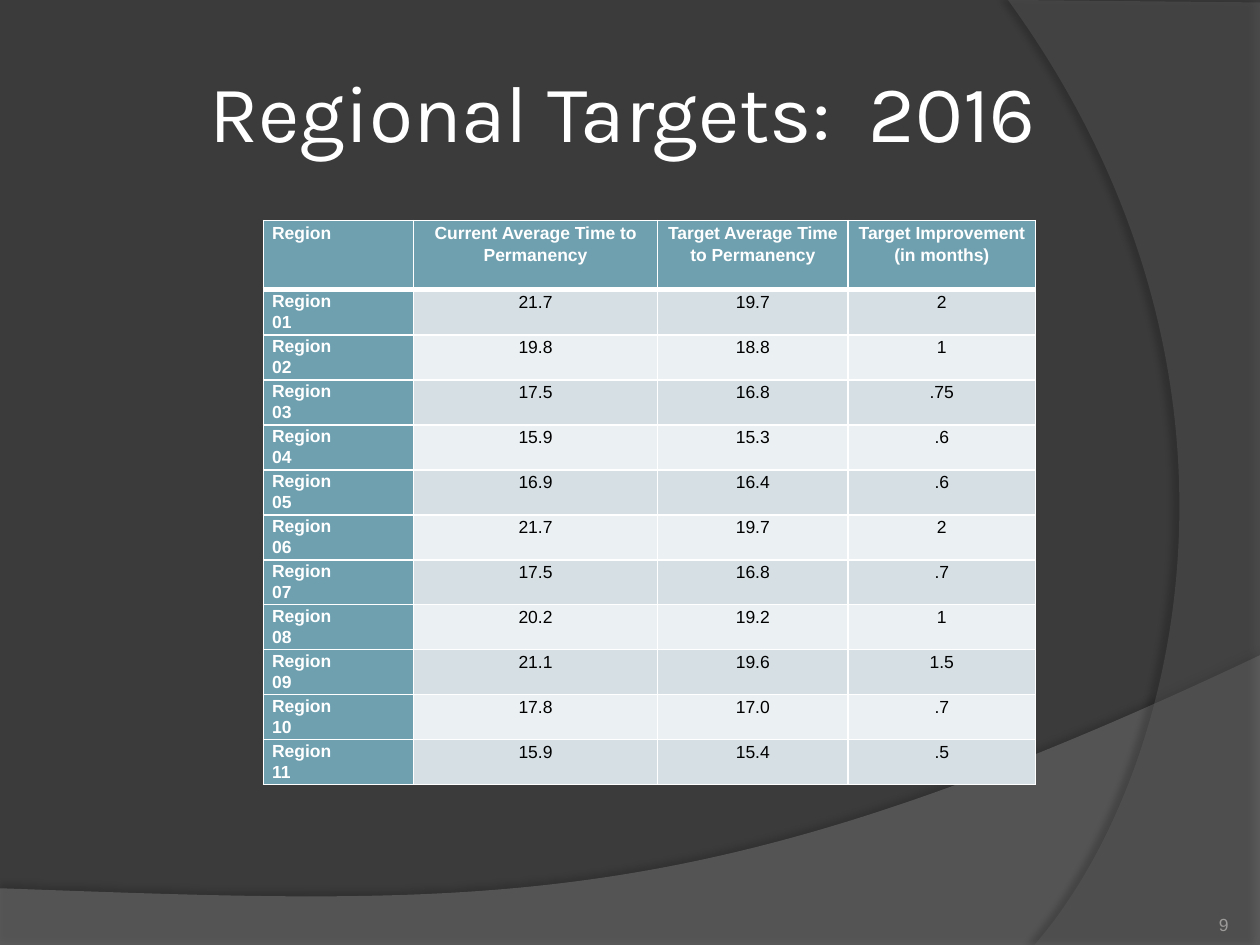
import dataclasses
import typing

import lxml.etree
import pptx
import pptx.dml.color
import pptx.enum.text
import pptx.oxml.ns
import pptx.util

Inches = pptx.util.Inches
Pt = pptx.util.Pt
qn = pptx.oxml.ns.qn
Align = pptx.enum.text.PP_ALIGN
Anchor = pptx.enum.text.MSO_ANCHOR
Point = tuple[float, float]


@dataclasses.dataclass(frozen=True)
class Theme:
    background: str = "3B3B3B"
    white: str = "FFFFFF"
    black: str = "000000"
    muted: str = "9D9B9A"
    accent: str = "6EA0B0"
    bands: tuple[str, str] = ("D5DFE4", "EBF0F2")
    title_font: str = "Karla"
    body_font: str = "Arial"
    title_size: int = 46
    body_size: int = 10


@dataclasses.dataclass(frozen=True)
class Wave:
    """Straight corners, then one Bezier curve starting at the last corner."""
    corners: tuple[Point, ...]
    curve: tuple[Point, Point, Point]
    color: str
    opacity: int
    shadow_opacity: int
    shadow_distance: float
    shadow_angle: int


class Target(typing.NamedTuple):
    region: str
    current: str
    target: str
    improvement: str


THEME = Theme()
WAVES = (
    Wave(((0, 7.05), (0, 7.51), (10, 7.51), (10, 5.2)),
         ((5.59, 7.29), (3.91, 7.19), (0, 7.05)), "7F7F7F", 45, 35, 3.5, 270),
    Wave(((8, 0), (10, 0.02), (10, 7.5), (8.21, 7.5)),
         ((9.35, 6.19), (10.18, 3), (8, 0)), "5E5E5E", 40, 45, 4, 180),
)
HEADER = Target("Region", "Current Average Time to Permanency",
                "Target Average Time to Permanency", "Target Improvement (in months)")
TARGETS = (
    Target("Region 01", "21.7", "19.7", "2"),
    Target("Region 02", "19.8", "18.8", "1"),
    Target("Region 03", "17.5", "16.8", ".75"),
    Target("Region 04", "15.9", "15.3", ".6"),
    Target("Region 05", "16.9", "16.4", ".6"),
    Target("Region 06", "21.7", "19.7", "2"),
    Target("Region 07", "17.5", "16.8", ".7"),
    Target("Region 08", "20.2", "19.2", "1"),
    Target("Region 09", "21.1", "19.6", "1.5"),
    Target("Region 10", "17.8", "17.0", ".7"),
    Target("Region 11", "15.9", "15.4", ".5"),
)
COLUMN_WIDTHS = (1.19, 1.94, 1.51, 1.49)
HEADER_HEIGHT, BODY_HEIGHT = 0.55, 3.93


def rgb(color: str) -> pptx.dml.color.RGBColor:
    return pptx.dml.color.RGBColor.from_string(color)


def add_run(p, text: str, font: str, size: float, color: str, bold: bool = False) -> None:
    r = p.add_run()
    r.text = text
    r.font.name = font
    r.font.size = Pt(size)
    r.font.bold = bold
    r.font.color.rgb = rgb(color)


def set_margins(frame, left: float, top: float, right: float, bottom: float) -> None:
    frame.margin_left, frame.margin_top = Inches(left), Inches(top)
    frame.margin_right, frame.margin_bottom = Inches(right), Inches(bottom)


def set_opacity(color_element, percent: int) -> None:
    lxml.etree.SubElement(color_element, qn("a:alpha"), val=str(percent * 1000))


def add_wave(s, wave: Wave) -> None:
    points = [(Inches(x), Inches(y)) for x, y in wave.corners]
    builder = s.shapes.build_freeform(*points[0])
    builder.add_line_segments(points[1:], close=True)
    sp = builder.convert_to_shape()
    # Curved edge from the last corner back to the first
    curve = lxml.etree.Element(qn("a:cubicBezTo"))
    for x, y in wave.curve:
        lxml.etree.SubElement(curve, qn("a:pt"), x=str(Inches(x) - sp.left),
                              y=str(Inches(y) - sp.top))
    next(sp.element.spPr.iter(qn("a:close"))).addprevious(curve)
    sp.fill.solid()
    sp.fill.fore_color.rgb = rgb(wave.color)
    set_opacity(sp.element.spPr.find(f"{qn('a:solidFill')}/{qn('a:srgbClr')}"), wave.opacity)
    sp.line.fill.background()
    # Soft shadow along the curved edge
    sp.shadow.inherit = False
    shadow = lxml.etree.SubElement(
        sp.element.spPr.find(qn("a:effectLst")), qn("a:outerShdw"),
        blurRad=str(Pt(4)), dist=str(Pt(wave.shadow_distance)),
        dir=str(wave.shadow_angle * 60000), algn="ctr", rotWithShape="0")
    set_opacity(lxml.etree.SubElement(shadow, qn("a:srgbClr"), val=THEME.black),
                wave.shadow_opacity)


def add_title(s, text: str) -> None:
    sp = s.shapes.title
    sp.element.getparent().append(sp.element)  # in front of the waves
    sp.left, sp.top, sp.width, sp.height = map(Inches, (1, 0.25, 8.2, 1.25))
    tf = sp.text_frame
    tf.auto_size = pptx.enum.text.MSO_AUTO_SIZE.NONE
    tf.vertical_anchor = Anchor.MIDDLE
    set_margins(tf, 0.66, 0.05, 0.05, 0.05)
    p = tf.paragraphs[0]
    p.alignment = Align.LEFT
    add_run(p, text, THEME.title_font, THEME.title_size, THEME.white)


def add_page_number(s, text: str) -> None:
    sp = s.shapes.add_textbox(*map(Inches, (8.92, 7.02, 0.83, 0.4)))
    tf = sp.text_frame
    tf.word_wrap = True
    tf.vertical_anchor = Anchor.BOTTOM
    set_margins(tf, 0, 0, 0, 0)
    p = tf.paragraphs[0]
    p.alignment = Align.RIGHT
    add_run(p, text, THEME.body_font, THEME.body_size, THEME.muted)


def set_borders(cell, row: int) -> None:
    thick = {0: "a:lnB", 1: "a:lnT"}.get(row)  # rule below the header
    for tag in ("a:lnL", "a:lnR", "a:lnT", "a:lnB"):
        ln = lxml.etree.SubElement(cell._tc.get_or_add_tcPr(), qn(tag),
                                   w=str(Pt(3 if tag == thick else 1)))
        fill = lxml.etree.SubElement(ln, qn("a:solidFill"))
        lxml.etree.SubElement(fill, qn("a:srgbClr"), val=THEME.white)


def fill_cell(cell, text: str, row: int, column: int) -> None:
    heading = row == 0 or column == 0
    region = row > 0 and column == 0
    set_borders(cell, row)
    cell.fill.solid()
    cell.fill.fore_color.rgb = rgb(THEME.accent if heading else THEME.bands[(row - 1) % 2])
    # The wide right margin puts each region number on its own line
    set_margins(cell, 0.07, 0, 0.6 if region else 0.07, 0)
    p = cell.text_frame.paragraphs[0]
    p.alignment = Align.CENTER if column else Align.LEFT
    # Two-line region names need tighter lines to fit their row
    p.line_spacing = Pt(12.2) if region else 1.15
    p.space_after = Pt(0)
    add_run(p, text, THEME.body_font, THEME.body_size,
            THEME.white if heading else THEME.black, heading)


def add_target_table(s) -> None:
    rows = (HEADER, *TARGETS)
    table = s.shapes.add_table(
        len(rows), len(HEADER), Inches(2.09), Inches(1.75),
        Inches(sum(COLUMN_WIDTHS)), Inches(HEADER_HEIGHT + BODY_HEIGHT)).table
    for column, width in zip(table.columns, COLUMN_WIDTHS):
        column.width = Inches(width)
    for i, values in enumerate(rows):
        table.rows[i].height = Inches(BODY_HEIGHT / len(TARGETS) if i else HEADER_HEIGHT)
        for j, text in enumerate(values):
            fill_cell(table.cell(i, j), text, i, j)


def main() -> None:
    prs = pptx.Presentation()
    prs.slide_width, prs.slide_height = Inches(10), Inches(7.5)
    s = prs.slides.add_slide(prs.slide_layouts[5])
    s.background.fill.solid()
    s.background.fill.fore_color.rgb = rgb(THEME.background)
    for wave in WAVES:
        add_wave(s, wave)
    add_title(s, "Regional Targets:  2016")
    add_page_number(s, "9")
    add_target_table(s)
    prs.save("out.pptx")


if __name__ == "__main__":
    main()
